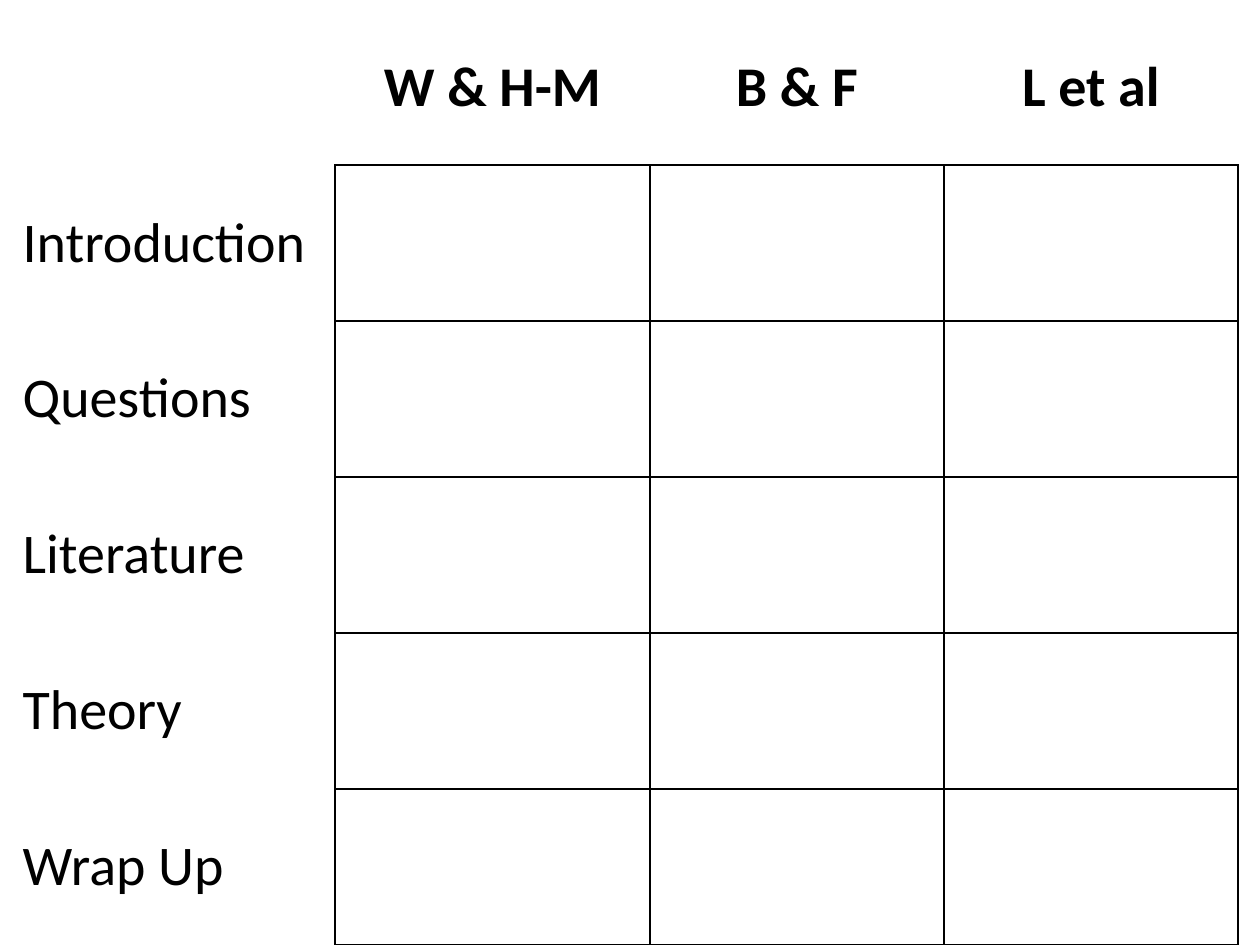
"""Build a blank comparison grid of three papers by five sections."""
from lxml.etree import SubElement
from pptx import Presentation
from pptx.dml.color import RGBColor
from pptx.enum.text import MSO_ANCHOR, PP_ALIGN
from pptx.oxml.ns import qn
from pptx.util import Emu, Pt

PAPERS = ["W & H-M", "B & F", "L et al"]
SECTIONS = ["Introduction", "Questions", "Literature", "Theory", "Wrap Up"]
COLUMN_WIDTHS = [325, 315, 294, 294]
ROW_HEIGHT = 156
LEFT, TOP = 10, 9
SLIDE_SIZE = (1260, 945)
COLORS = {"ink": "000000"}
FONT = "Calibri"


def px(length):
    """Turn pixels at 126 to the inch into EMU."""
    return Emu(round(length * 914400 / 126))


def set_border(cell, side, visible):
    """Draw or hide one side of a cell."""
    line = SubElement(cell._tc.get_or_add_tcPr(), qn(f"a:ln{side}"), w=str(Pt(1)))
    if visible:
        fill = SubElement(line, qn("a:solidFill"))
        SubElement(fill, qn("a:srgbClr"), val=COLORS["ink"])
    else:
        SubElement(line, qn("a:noFill"))


def write_label(cell, label, is_heading):
    """Put a heading or a section name into a cell."""
    cell.vertical_anchor = MSO_ANCHOR.MIDDLE
    paragraph = cell.text_frame.paragraphs[0]
    paragraph.text = label
    paragraph.alignment = PP_ALIGN.CENTER if is_heading else PP_ALIGN.LEFT
    font = paragraph.runs[0].font
    font.name, font.size, font.bold = FONT, Pt(32), is_heading
    font.color.rgb = RGBColor.from_string(COLORS["ink"])


def main():
    """Lay out the grid and save the slide."""
    deck = Presentation()
    deck.slide_width, deck.slide_height = map(px, SLIDE_SIZE)
    slide = deck.slides.add_slide(deck.slide_layouts[6])
    labels = [["", *PAPERS]] + [[name] + [""] * len(PAPERS) for name in SECTIONS]
    grid = slide.shapes.add_table(
        len(labels), len(COLUMN_WIDTHS), px(LEFT), px(TOP),
        px(sum(COLUMN_WIDTHS)), px(ROW_HEIGHT * len(labels))).table
    grid.first_row = grid.horz_banding = False
    for column, width in zip(grid.columns, COLUMN_WIDTHS):
        column.width = px(width)
    for r, row_labels in enumerate(labels):
        grid.rows[r].height = px(ROW_HEIGHT)
        for c, label in enumerate(row_labels):
            cell = grid.cell(r, c)
            in_body = r > 0 and c > 0
            borders = {"L": in_body, "R": r > 0, "T": in_body, "B": c > 0}
            for side, visible in borders.items():
                set_border(cell, side, visible)
            cell.fill.background()
            if label:
                write_label(cell, label, r == 0)
    deck.save("out.pptx")


if __name__ == "__main__":
    main()
